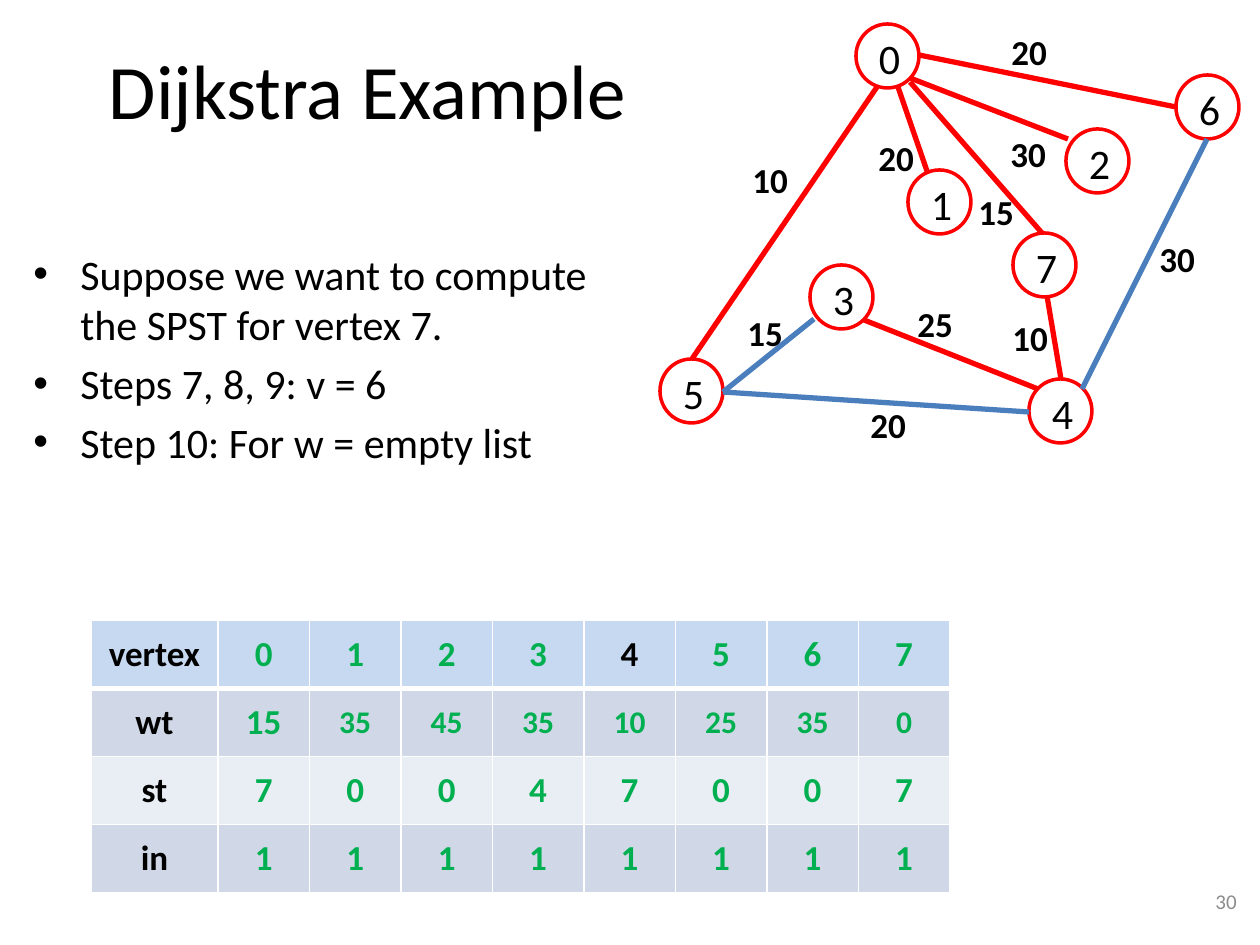
from dataclasses import dataclass

from lxml.etree import SubElement
from pptx import Presentation
from pptx.dml.color import RGBColor
from pptx.enum.shapes import MSO_CONNECTOR as Connector, MSO_SHAPE as Shape
from pptx.enum.text import MSO_ANCHOR as Anchor, PP_ALIGN as Align
from pptx.oxml.ns import qn
from pptx.util import Emu, Pt


@dataclass(frozen=True)
class Theme:
    font: str = "Calibri"
    ink: str = "000000"
    muted: str = "8C8C8C"
    tree: str = "FF0000"
    other: str = "4B7EBC"
    done: str = "00B050"
    border: str = "FFFFFF"
    rows: tuple = ("C6D9F1", "D0D8E8", "E9EDF4", "D0D8E8")
    title: int = 44
    body: int = 24
    label: int = 20
    small: int = 18
    number: int = 12


THEME = Theme()

# Content, with places in px
TITLE = "Dijkstra Example"
BULLETS = [
    ("Suppose we want to compute", "the SPST for vertex 7."),
    ("Steps 7, 8, 9: v = 6",),
    ("Step 10: For w = empty list",),
]
PAGE_NUMBER = "30"
NODE_SIZE = (63, 64)
NODES = {
    "0": (856, 24), "1": (908, 170), "7": (1013, 233), "2": (1066, 129),
    "5": (660, 359), "3": (810, 265), "4": (1029, 379), "6": (1176, 75),
}
TREE_EDGES = [
    (919, 55, 1176, 107), (910, 78, 1068, 139), (898, 87, 927, 171),
    (877, 87, 692, 359), (910, 82, 1042, 233), (864, 320, 1038, 389),
    (1047, 296, 1061, 379),
]
OTHER_EDGES = [
    (723, 392, 814, 319), (723, 392, 1029, 412), (1207, 139, 1082, 389),
]
WEIGHT_SIZE = (62, 55)
WEIGHTS = [
    ("10", 1000, 310), ("10", 740, 152), ("20", 999, 24), ("30", 998, 126),
    ("20", 866, 130), ("15", 966, 184), ("30", 1147, 231), ("20", 858, 397),
    ("15", 735, 305), ("25", 905, 296),
]
TABLE_BOX = (91, 620, 859, 273)
FIRST_COLUMN = 127
TABLE = [
    ["vertex", "0", "1", "2", "3", "4", "5", "6", "7"],
    ["wt", "15", "35", "45", "35", "10", "25", "35", "0"],
    ["st", "7", "0", "0", "4", "7", "0", "0", "7"],
    ["in", "1", "1", "1", "1", "1", "1", "1", "1"],
]
BLACK_HEADER = 5


def px(length):
    return Emu(round(length * 914400 / 126))


def color(value):
    return RGBColor.from_string(value)


def add_span(para, text, size, tint=THEME.ink, bold=False):
    span = para.add_run()
    span.text = text
    span.font.name = THEME.font
    span.font.size = Pt(size)
    span.font.bold = bold
    span.font.color.rgb = color(tint)


def add_box(page, *place):
    return page.shapes.add_textbox(*map(px, place)).text_frame


def add_bullets(page):
    frame = add_box(page, 21, 242, 745, 459)
    frame.word_wrap = True
    for index, lines in enumerate(BULLETS):
        para = frame.add_paragraph() if index else frame.paragraphs[0]
        para.space_before = Pt(THEME.body * 0.2)
        props = para._p.get_or_add_pPr()
        props.set("marL", str(px(47)))
        props.set("indent", str(-px(47)))
        SubElement(props, qn("a:buFont"), typeface="Arial")
        SubElement(props, qn("a:buChar"), char="•")
        for number, line in enumerate(lines):
            if number:
                para.add_line_break()
            add_span(para, line, THEME.body)


def add_node(page, name, left, top):
    node = page.shapes.add_shape(Shape.OVAL, *map(px, (left, top, *NODE_SIZE)))
    node.shadow.inherit = False
    node.fill.background()
    node.line.color.rgb = color(THEME.tree)
    node.line.width = Pt(2)
    frame = node.text_frame
    frame.word_wrap = False
    frame.vertical_anchor = Anchor.MIDDLE
    frame.margin_left = frame.margin_top = px(4)
    frame.margin_right = frame.margin_bottom = 0
    para = frame.paragraphs[0]
    para.alignment = Align.CENTER
    add_span(para, name, THEME.body)


def add_edge(page, ends, tint):
    edge = page.shapes.add_connector(Connector.STRAIGHT, *map(px, ends))
    edge.line.color.rgb = color(tint)
    edge.line.width = Pt(3)
    SubElement(edge._element.spPr, qn("a:effectLst"))


def set_borders(cell, row):
    props = cell._tc.get_or_add_tcPr()
    thick = {0: "lnB", 1: "lnT"}.get(row)
    for place, side in enumerate(("lnL", "lnR", "lnT", "lnB")):
        line = props.makeelement(qn(f"a:{side}"), {"w": str(Pt(3 if side == thick else 1))})
        fill = SubElement(line, qn("a:solidFill"))
        SubElement(fill, qn("a:srgbClr"), val=THEME.border)
        props.insert(place, line)


def add_table(page):
    rows, columns = len(TABLE), len(TABLE[0])
    table = page.shapes.add_table(rows, columns, *map(px, TABLE_BOX)).table
    width, height = TABLE_BOX[2:]
    for index, column in enumerate(table.columns):
        column.width = px((width - FIRST_COLUMN) / (columns - 1) if index else FIRST_COLUMN)
    for r, values in enumerate(TABLE):
        table.rows[r].height = px(height / rows)
        for c, value in enumerate(values):
            cell = table.cell(r, c)
            cell.fill.solid()
            cell.fill.fore_color.rgb = color(THEME.rows[r])
            cell.vertical_anchor = Anchor.MIDDLE
            set_borders(cell, r)
            para = cell.text_frame.paragraphs[0]
            para.alignment = Align.CENTER
            plain = c == 0 or (r, c) == (0, BLACK_HEADER)
            size = THEME.small if r == 1 and c > 1 else THEME.label
            add_span(para, value, size, THEME.ink if plain else THEME.done, True)


def main():
    deck = Presentation()
    deck.slide_width, deck.slide_height = px(1260), px(945)
    page = deck.slides.add_slide(deck.slide_layouts[5])

    # Title and bullets
    title = page.shapes.title
    title.left, title.top, title.width, title.height = map(px, (63, 10, 609, 158))
    title.text_frame.vertical_anchor = Anchor.MIDDLE
    para = title.text_frame.paragraphs[0]
    para.alignment = Align.CENTER
    add_span(para, TITLE, THEME.title)
    add_bullets(page)

    # Page number
    frame = add_box(page, 955, 876, 294, 50)
    frame.word_wrap = True
    frame.vertical_anchor = Anchor.MIDDLE
    frame.paragraphs[0].alignment = Align.RIGHT
    add_span(frame.paragraphs[0], PAGE_NUMBER, THEME.number, THEME.muted)

    # Graph
    for name, place in NODES.items():
        add_node(page, name, *place)
    for edges, tint in ((TREE_EDGES, THEME.tree), (OTHER_EDGES, THEME.other)):
        for ends in edges:
            add_edge(page, ends, tint)
    for text, left, top in WEIGHTS:
        frame = add_box(page, left, top, *WEIGHT_SIZE)
        frame.word_wrap = False
        add_span(frame.paragraphs[0], text, THEME.label, bold=True)

    # Vertex table
    add_table(page)
    deck.save("out.pptx")


if __name__ == "__main__":
    main()
